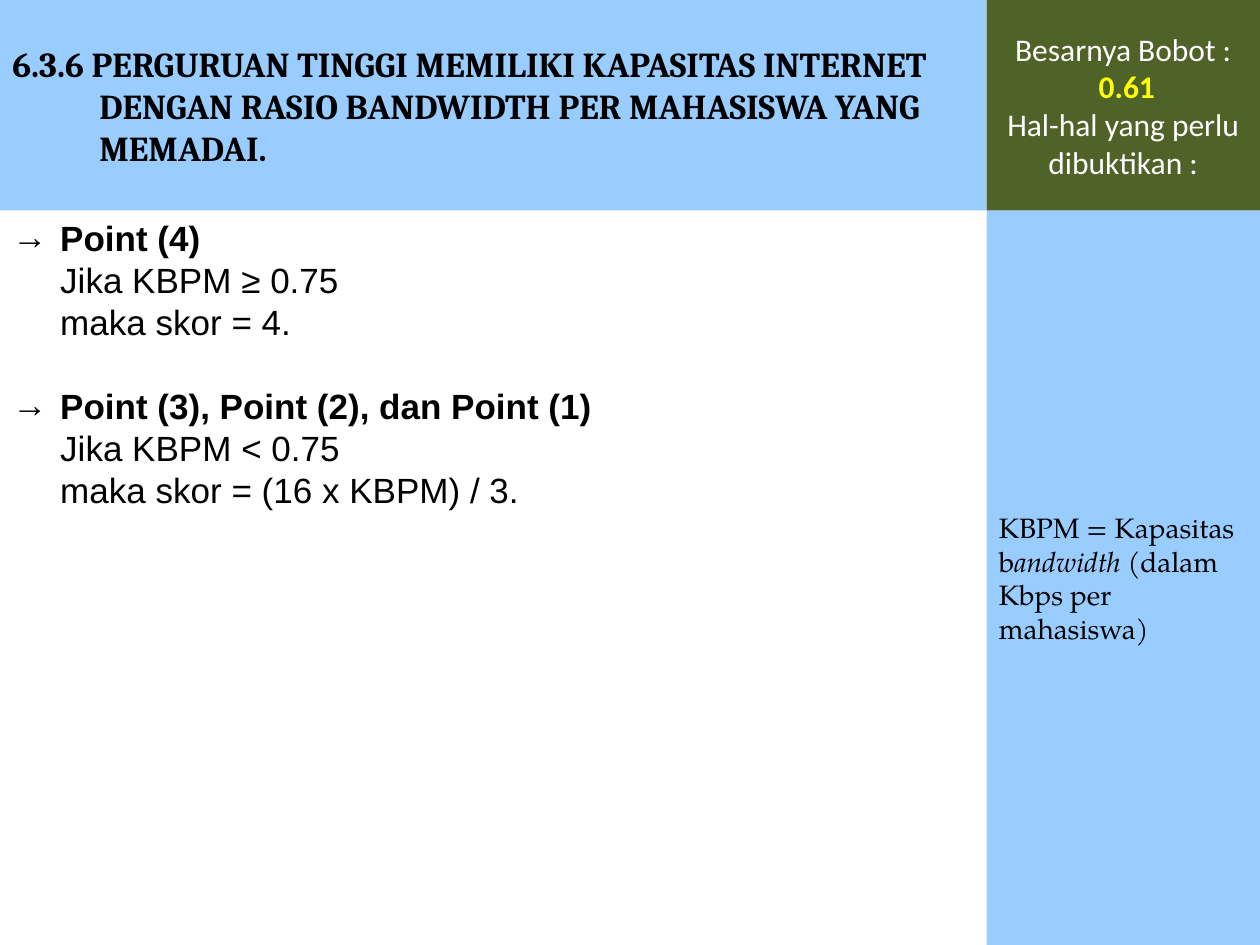
from lxml import etree
from pptx import Presentation
from pptx.dml.color import RGBColor
from pptx.enum.shapes import MSO_SHAPE
from pptx.enum.text import MSO_ANCHOR, PP_ALIGN
from pptx.oxml.ns import qn
from pptx.util import Inches, Pt

RECTANGLE = MSO_SHAPE.RECTANGLE
MIDDLE, TOP = MSO_ANCHOR.MIDDLE, MSO_ANCHOR.TOP
LEFT, CENTER = PP_ALIGN.LEFT, PP_ALIGN.CENTER

COLORS = {
    "sky": "99CCFF",
    "olive": "4F6228",
    "black": "000000",
    "white": "FFFFFF",
    "yellow": "FFFF00",
}

WIDTH, HEIGHT = 10, 7.5
MAIN_WIDTH, HEADER_HEIGHT = 7.83, 1.67
SIDE_WIDTH = WIDTH - MAIN_WIDTH
BODY_HEIGHT = HEIGHT - HEADER_HEIGHT
BODY_LINE = 24  # points


class SlideBuilder:
    """Holds the current slide and the way its parts are styled."""

    def __init__(self, slide):
        self.slide = slide

    def panel(self, left, top, width, height, fill):
        shape = self.slide.shapes.add_shape(
            RECTANGLE, Inches(left), Inches(top), Inches(width), Inches(height))
        shape.shadow.inherit = False
        shape.fill.solid()
        shape.fill.fore_color.rgb = RGBColor.from_string(COLORS[fill])
        shape.line.fill.background()
        return self.frame(shape, MIDDLE)

    def text_box(self, left, top, width, height):
        shape = self.slide.shapes.add_textbox(
            Inches(left), Inches(top), Inches(width), Inches(height))
        return self.frame(shape, TOP)

    def frame(self, shape, anchor):
        shape.text_frame.word_wrap = True
        shape.text_frame.vertical_anchor = anchor
        return shape.text_frame

    def paragraph(self, frame, first, align=LEFT, margin=0, indent=0, bullet=None):
        paragraph = frame.paragraphs[0] if first else frame.add_paragraph()
        paragraph.alignment = align
        properties = paragraph._p.get_or_add_pPr()
        properties.set("marL", str(Inches(margin)))
        properties.set("indent", str(Inches(indent)))
        if bullet:
            etree.SubElement(properties, qn("a:buFont")).set("typeface", "Arial")
            etree.SubElement(properties, qn("a:buChar")).set("char", bullet)
        return paragraph

    def run(self, paragraph, text, font, size, color="black", bold=False, italic=False):
        run = paragraph.add_run()
        run.text = text
        run.font.name = font
        run.font.size = Pt(size)
        run.font.bold = bold
        run.font.italic = italic
        run.font.color.rgb = RGBColor.from_string(COLORS[color])


def main():
    presentation = Presentation()
    presentation.slide_width = Inches(WIDTH)
    presentation.slide_height = Inches(HEIGHT)
    builder = SlideBuilder(presentation.slides.add_slide(presentation.slide_layouts[6]))

    # Scoring rules
    rules = [
        ("Point (4)", "Jika KBPM ≥ 0.75", "maka skor = 4."),
        ("Point (3), Point (2), dan Point (1)", "Jika KBPM < 0.75",
         "maka skor = (16 x KBPM) / 3."),
    ]
    body = builder.text_box(0, HEADER_HEIGHT, MAIN_WIDTH, BODY_HEIGHT)
    for rule_index, lines in enumerate(rules):
        for line_index, text in enumerate(lines):
            heading = line_index == 0
            first = heading and rule_index == 0
            paragraph = builder.paragraph(
                body, first, margin=0.38, indent=-0.38 if heading else 0,
                bullet="→" if heading else None)
            paragraph.line_spacing = Pt(BODY_LINE)
            if heading and not first:
                paragraph.space_before = Pt(BODY_LINE)
            builder.run(paragraph, text, "Arial", 20, bold=heading)

    # Title with hanging indent
    title = builder.panel(0, 0, MAIN_WIDTH, HEADER_HEIGHT, "sky")
    paragraph = builder.paragraph(title, True, margin=0.69, indent=-0.69)
    builder.run(
        paragraph,
        "6.3.6 PERGURUAN TINGGI MEMILIKI KAPASITAS INTERNET DENGAN RASIO "
        "BANDWIDTH PER MAHASISWA YANG MEMADAI.",
        "Cambria", 20, bold=True)

    # Definition of the abbreviation
    definition = builder.panel(MAIN_WIDTH, HEADER_HEIGHT, SIDE_WIDTH, BODY_HEIGHT, "sky")
    paragraph = builder.paragraph(definition, True)
    paragraph.space_before = Pt(3.2)
    for text, italic in [("KBPM = Kapasitas b", False), ("andwidth", True),
                         (" (dalam Kbps per mahasiswa)", False)]:
        builder.run(paragraph, text, "TeX Gyre Pagella", 16, italic=italic)

    # Weight of the criterion
    weight = builder.panel(MAIN_WIDTH, 0, SIDE_WIDTH, HEADER_HEIGHT, "olive")
    weight_lines = [
        [("Besarnya Bobot :", "white", False)],
        [(" ", "white", False), ("0.61", "yellow", True)],
        [("Hal-hal yang perlu dibuktikan :", "white", False)],
    ]
    for index, runs in enumerate(weight_lines):
        paragraph = builder.paragraph(weight, index == 0, align=CENTER)
        for text, color, bold in runs:
            builder.run(paragraph, text, "Calibri", 18, color, bold)

    presentation.save("out.pptx")


if __name__ == "__main__":
    main()
